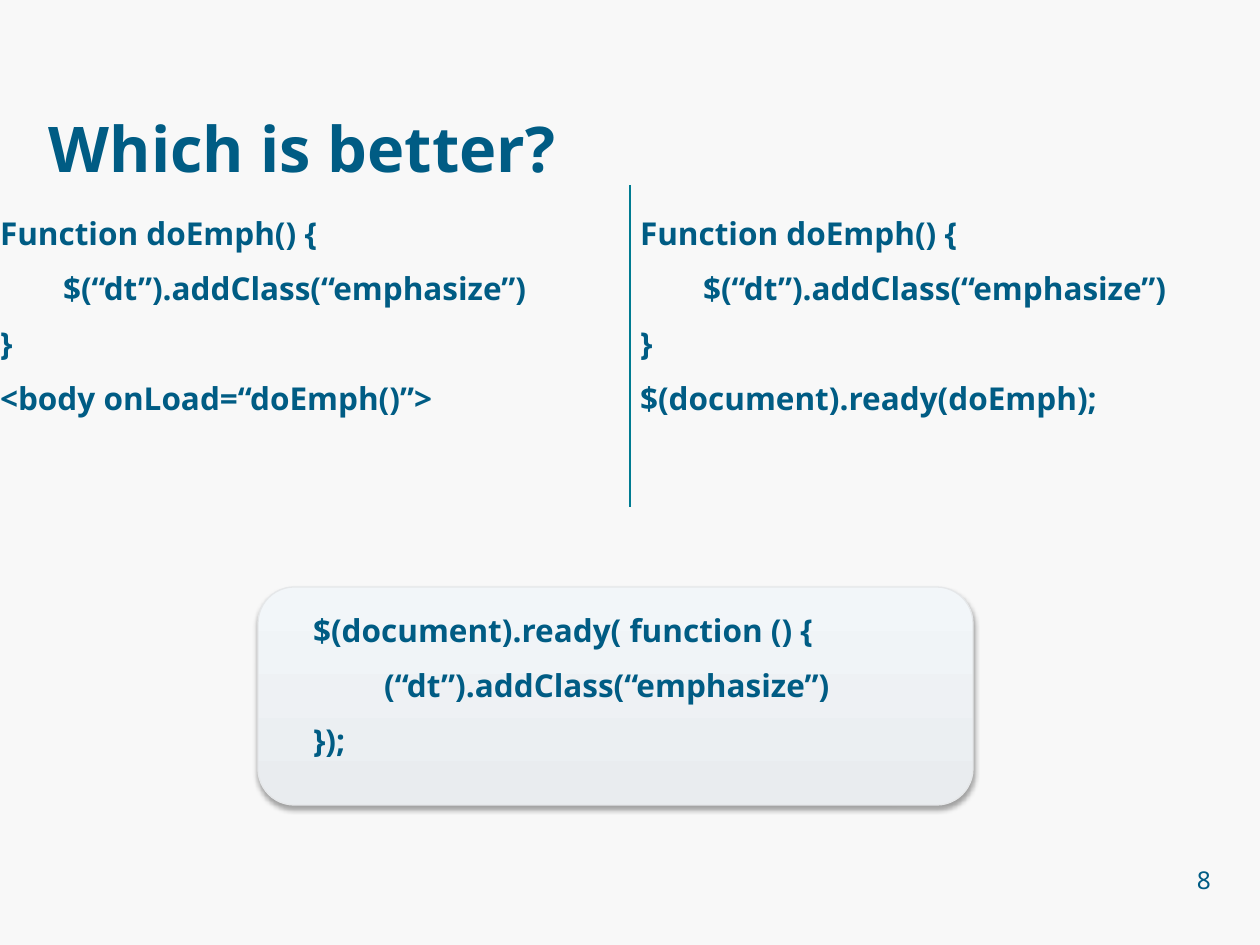
from lxml.etree import SubElement
from pptx import Presentation
from pptx.dml.color import RGBColor
from pptx.enum.shapes import MSO_CONNECTOR, MSO_SHAPE
from pptx.enum.text import MSO_ANCHOR, PP_ALIGN
from pptx.oxml.ns import qn
from pptx.util import Emu, Pt


def px(length):
    return Emu(length * 914400 // 126)


def color(value):
    return RGBColor.from_string(value)


class SlideBuilder:
    """Holds the style and the slide being filled."""
    font = "Noto Sans"
    ink = "005C84"
    rule = "007C92"
    background = "F8F8F8"

    def __init__(self, slide):
        self.slide = slide
        fill = slide.background.fill
        fill.solid()
        fill.fore_color.rgb = color(self.background)

    def text(self, lines, left, top, width, height, size, bold=True,
             align=PP_ALIGN.LEFT, anchor=MSO_ANCHOR.TOP, gap=0):
        box = self.slide.shapes.add_textbox(px(left), px(top), px(width), px(height))
        frame = box.text_frame
        frame.word_wrap = True
        frame.vertical_anchor = anchor
        frame.margin_left = frame.margin_right = 0
        frame.margin_top = frame.margin_bottom = 0
        frame.text = "\n".join(lines)
        for para in frame.paragraphs:
            para.alignment = align
            para.space_before = Pt(gap)
            for span in para.runs:
                span.font.name = self.font
                span.font.size = Pt(size)
                span.font.bold = bold
                span.font.color.rgb = color(self.ink)

    def code(self, lines, left, top, height):
        self.text(lines, left, top, 635, height, size=18, gap=9.8)

    def panel(self, left, top, width, height):
        """Rounded panel with a vertical gradient and a soft shadow."""
        panel = self.slide.shapes.add_shape(
            MSO_SHAPE.ROUNDED_RECTANGLE, px(left), px(top), px(width), px(height))
        panel.fill.gradient()
        panel.fill.gradient_angle = 90
        for stop, position, tint in zip(panel.fill.gradient_stops, (0, 1), ("E9ECEF", "F2F6F9")):
            stop.position = position
            stop.color.rgb = color(tint)
        panel.line.color.rgb = color("E5E7E9")
        panel.line.width = Pt(0.75)
        panel.shadow.inherit = False
        effects = panel._element.spPr.find(qn("a:effectLst"))
        shadow = SubElement(effects, qn("a:outerShdw"), blurRad=str(Pt(3.1)),
                            dist=str(Pt(1.8)), dir="5400000", rotWithShape="0")
        shade = SubElement(shadow, qn("a:srgbClr"), val="000000")
        SubElement(shade, qn("a:alpha"), val="35000")

    def divider(self, x, top, bottom):
        line = self.slide.shapes.add_connector(
            MSO_CONNECTOR.STRAIGHT, px(x), px(top), px(x), px(bottom))
        line.line.color.rgb = color(self.rule)
        line.line.width = Pt(1)
        SubElement(line._element.spPr, qn("a:effectLst"))


def main():
    deck = Presentation()
    deck.slide_width, deck.slide_height = px(1260), px(945)
    page = SlideBuilder(deck.slides.add_slide(deck.slide_layouts[6]))

    page.panel(258, 587, 715, 218)
    page.text(["Which is better?"], 49, 0, 1162, 185, size=36, anchor=MSO_ANCHOR.BOTTOM)

    function = ["Function doEmph() {", "\t$(“dt”).addClass(“emphasize”)", "}"]
    calls = ["<body onLoad=“doEmph()”>", "$(document).ready(doEmph);"]
    for column, call in enumerate(calls):
        page.code(function + [call], column * 640, 214, 273)
    page.divider(630, 185, 507)

    page.code(["$(document).ready( function () {",
               "\t (“dt”).addClass(“emphasize”)", "});"], 313, 611, 189)
    page.text(["8"], 948, 869, 263, 25, size=14, bold=False,
              align=PP_ALIGN.RIGHT, anchor=MSO_ANCHOR.BOTTOM)
    deck.save("out.pptx")


if __name__ == "__main__":
    main()
